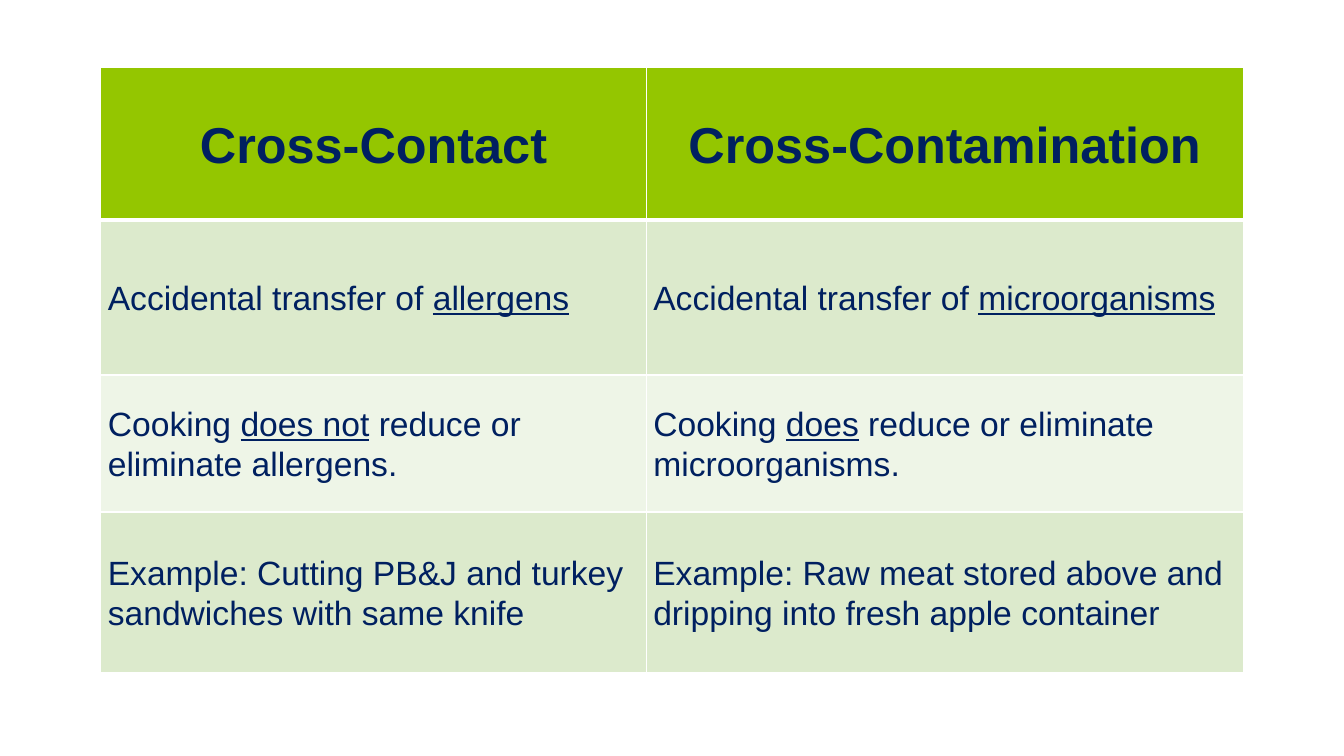
from lxml import etree
from pptx import Presentation
from pptx import util as u
from pptx.dml.color import RGBColor
from pptx.enum import text
from pptx.oxml import ns

PX = 9144  # 100 px to the inch
COLUMN_WIDTHS = [541, 592]
ROW_HEIGHTS = [151, 154, 136, 159]
ROW_FILLS = ["94C600", "DCEACC", "EEF5E7", "DCEACC"]
NAVY = "002060"

# Each cell is a list of runs; every second run is underlined.
ROWS = [
    [["Cross-Contact"], ["Cross-Contamination"]],
    [["Accidental transfer of ", "allergens"],
     ["Accidental transfer of ", "microorganisms"]],
    [["Cooking ", "does not", " reduce or eliminate allergens."],
     ["Cooking ", "does", " reduce or eliminate microorganisms."]],
    [["Example: Cutting PB&J and turkey sandwiches with same knife"],
     ["Example: Raw meat stored above and dripping into fresh apple container"]],
]


def color(hex_string):
    return RGBColor.from_string(hex_string)


def add_white_border(cell, side, points):
    properties = cell._tc.get_or_add_tcPr()
    line = etree.SubElement(properties, ns.qn(f"a:ln{side}"), w=str(u.Pt(points)))
    fill = etree.SubElement(line, ns.qn("a:solidFill"))
    etree.SubElement(fill, ns.qn("a:srgbClr"), val="FFFFFF")


presentation = Presentation()
presentation.slide_width = 1333 * PX
presentation.slide_height = 750 * PX
slide = presentation.slides.add_slide(presentation.slide_layouts[6])

table = slide.shapes.add_table(
    len(ROW_HEIGHTS), len(COLUMN_WIDTHS), 100 * PX, 67 * PX,
    sum(COLUMN_WIDTHS) * PX, sum(ROW_HEIGHTS) * PX).table
table.horz_banding = False
for column, width in zip(table.columns, COLUMN_WIDTHS):
    column.width = width * PX

for row_index, row_texts in enumerate(ROWS):
    table.rows[row_index].height = ROW_HEIGHTS[row_index] * PX
    is_header = row_index == 0
    for column_index, run_texts in enumerate(row_texts):
        cell = table.cell(row_index, column_index)
        cell.margin_left = cell.margin_right = 7 * PX
        cell.margin_top = cell.margin_bottom = 0
        cell.vertical_anchor = text.MSO_ANCHOR.MIDDLE
        border_widths = {"L": 1, "R": 1, "T": 3 if row_index == 1 else 1,
                         "B": 3 if is_header else 1}
        for side, points in border_widths.items():
            add_white_border(cell, side, points)
        cell.fill.solid()
        cell.fill.fore_color.rgb = color(ROW_FILLS[row_index])

        paragraph = cell.text_frame.paragraphs[0]
        paragraph.alignment = text.PP_ALIGN.CENTER if is_header else text.PP_ALIGN.LEFT
        paragraph.line_spacing = 1.07
        for run_index, run_text in enumerate(run_texts):
            run = paragraph.add_run()
            run.text = run_text
            run.font.name = "Arial"
            run.font.size = u.Pt(36 if is_header else 24)
            run.font.bold = is_header
            run.font.underline = run_index % 2 == 1
            run.font.color.rgb = color(NAVY)

presentation.save("out.pptx")
